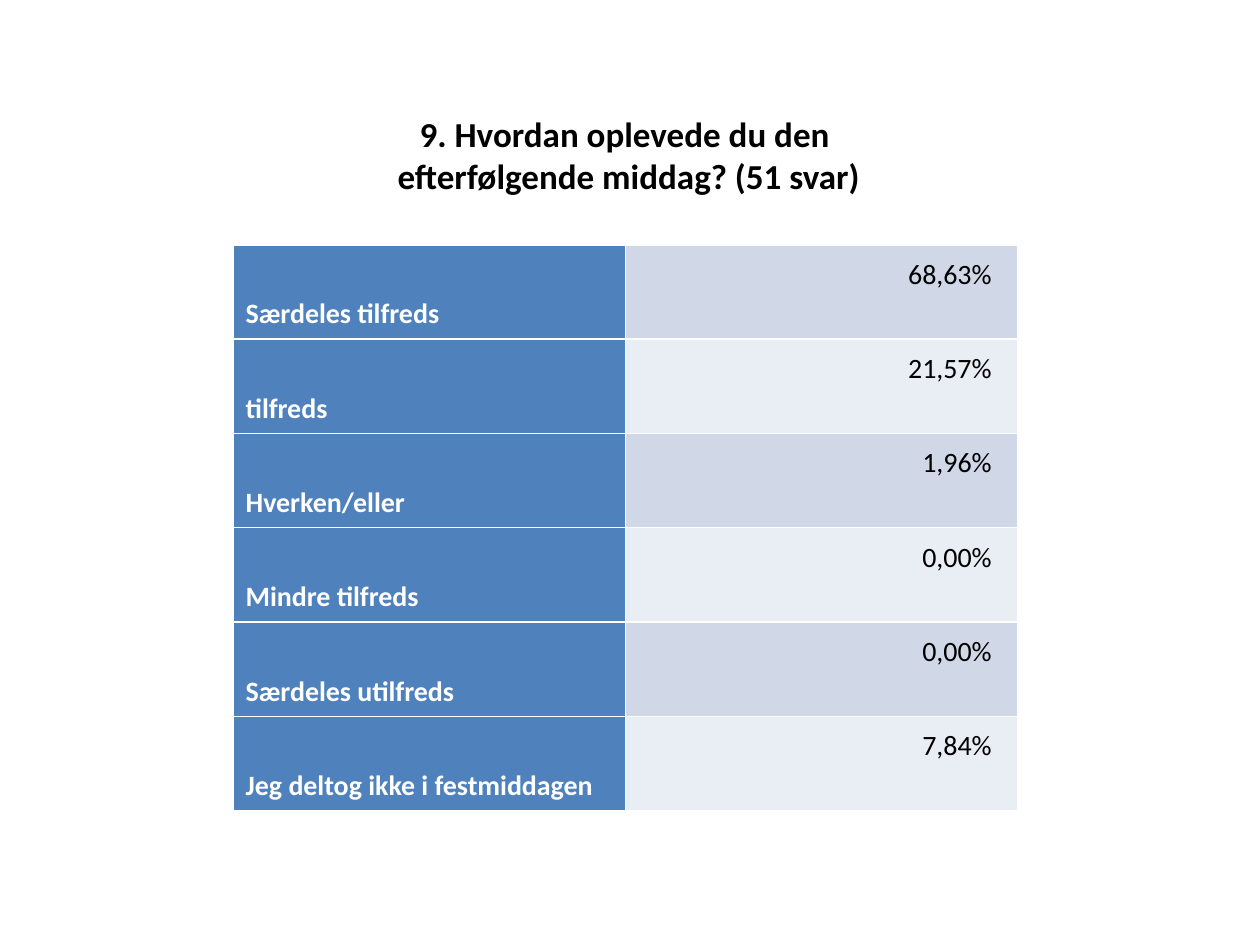
from lxml.etree import SubElement
from pptx import Presentation
from pptx.dml.color import RGBColor
from pptx.enum.text import MSO_ANCHOR, PP_ALIGN
from pptx.oxml.ns import qn
from pptx.util import Inches, Pt

WIDTH, HEIGHT = Inches(10), Inches(7.5)
COLORS = {"label": "4F81BD", "odd": "D0D8E8", "even": "E9EDF4",
          "light": "FFFFFF", "dark": "000000"}
LABEL = {"size": Pt(16), "bold": True, "name": "Calibri"}
VALUE = {"size": Pt(16), "bold": False, "name": "Calibri"}
TITLE = {"size": Pt(20), "bold": True, "name": "Calibri"}
MARGINS = {"margin_left": Inches(0.1), "margin_right": Inches(0.21),
           "margin_top": Inches(0.06), "margin_bottom": Inches(0.06)}

TITLE_LINES = ["9. Hvordan oplevede du den ", "efterfølgende middag? (51 svar)"]
ANSWERS = [
    ("Særdeles tilfreds", "68,63%"),
    ("tilfreds", "21,57%"),
    ("Hverken/eller", "1,96%"),
    ("Mindre tilfreds", "0,00%"),
    ("Særdeles utilfreds", "0,00%"),
    ("Jeg deltog ikke i festmiddagen", "7,84%"),
]


def box(left, top, width, height):
    """Turn shares of the slide into lengths."""
    return (int(left * WIDTH), int(top * HEIGHT),
            int(width * WIDTH), int(height * HEIGHT))


def rgb(name):
    return RGBColor.from_string(COLORS[name])


def set_attrs(obj, values):
    for key, value in values.items():
        setattr(obj, key, value)


def add_run(p, text, font, color):
    r = p.add_run()
    r.text = text
    set_attrs(r.font, font)
    r.font.color.rgb = rgb(color)


def add_title(s, area, lines):
    tf = s.shapes.add_textbox(*area).text_frame
    tf.word_wrap = True
    p = tf.paragraphs[0]
    p.alignment = PP_ALIGN.CENTER
    for i, line in enumerate(lines):
        if i:
            p.add_line_break()
        add_run(p, line, TITLE, "dark")


def add_borders(cell):
    tc_pr = cell._tc.get_or_add_tcPr()
    for side in ("lnL", "lnR", "lnT", "lnB"):
        ln = SubElement(tc_pr, qn(f"a:{side}"), w=str(Pt(1)))
        fill = SubElement(ln, qn("a:solidFill"))
        SubElement(fill, qn("a:srgbClr"), val=COLORS["light"])


def fill_cell(cell, text, font, color, fill, align, anchor):
    set_attrs(cell, {**MARGINS, "vertical_anchor": anchor})
    add_borders(cell)
    cell.fill.solid()
    cell.fill.fore_color.rgb = rgb(fill)
    p = cell.text_frame.paragraphs[0]
    set_attrs(p, {"alignment": align, "line_spacing": 1.15})
    add_run(p, text, font, color)


def add_answers(s, area, answers):
    table = s.shapes.add_table(len(answers), 2, *area).table
    for i, (label, value) in enumerate(answers):
        band = "even" if i % 2 else "odd"
        fill_cell(table.cell(i, 0), label, LABEL, "light", "label",
                  PP_ALIGN.LEFT, MSO_ANCHOR.BOTTOM)
        fill_cell(table.cell(i, 1), value, VALUE, "dark", band,
                  PP_ALIGN.RIGHT, MSO_ANCHOR.TOP)


def main():
    prs = Presentation()
    prs.slide_width, prs.slide_height = WIDTH, HEIGHT
    s = prs.slides.add_slide(prs.slide_layouts[6])
    add_answers(s, box(0.185, 0.259, 0.623, 0.599), ANSWERS)
    add_title(s, box(0.177, 0.112, 0.644, 0.103), TITLE_LINES)
    prs.save("out.pptx")


if __name__ == "__main__":
    main()
